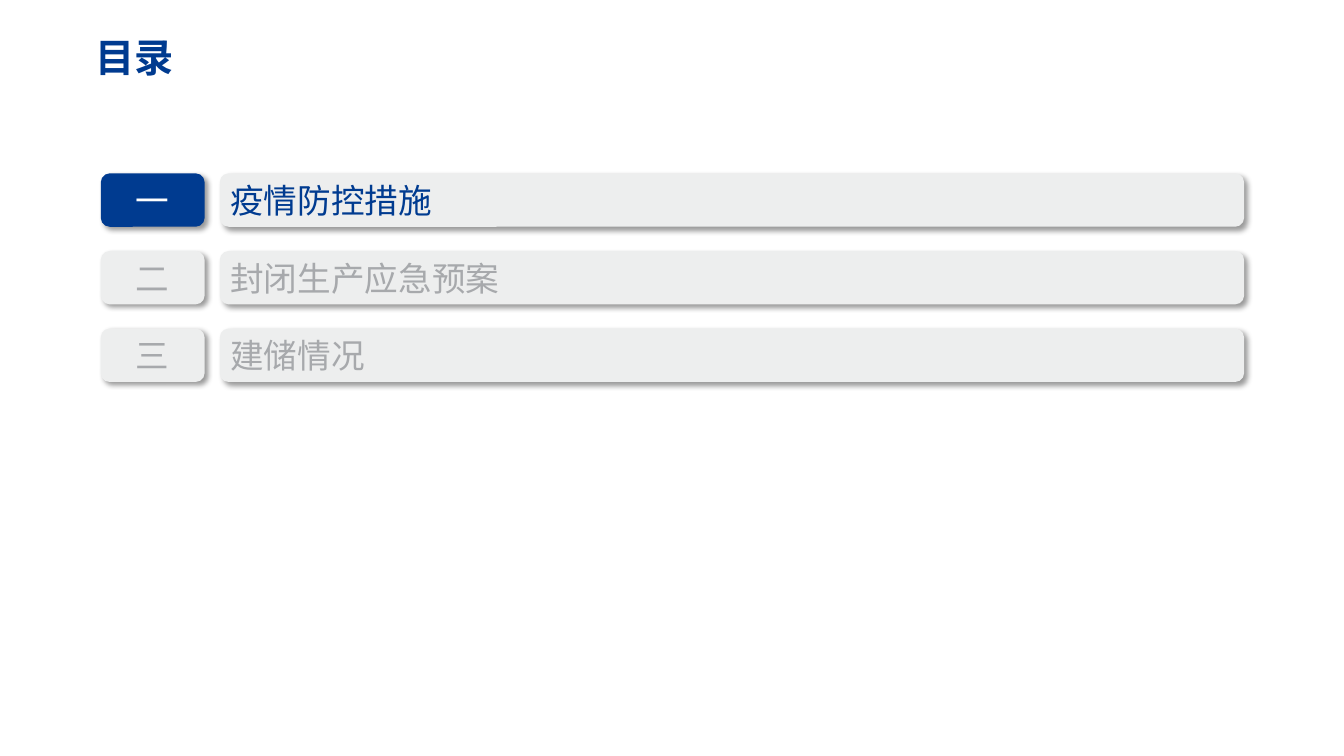
import lxml.etree
import pptx
import pptx.dml.color
import pptx.enum.shapes
import pptx.enum.text
import pptx.oxml.ns
import pptx.util

COLORS = {"navy": "003B90", "pale": "EDEEEE", "muted": "A7A9AC",
          "white": "FFFFFF", "shadow": "000000"}
FONT = "Noto Sans CJK SC"
SECTIONS = [("一", "疫情防控措施"), ("二", "封闭生产应急预案"), ("三", "建储情况")]
CURRENT = 0
ROW_PITCH, ROW_HEIGHT = 0.77, 0.53
NUMBER_WIDTH, COLUMN_GAP = 1.03, 0.15
LEFT = pptx.enum.text.PP_ALIGN.LEFT
CENTER = pptx.enum.text.PP_ALIGN.CENTER


def rgb(name):
    """Return the named palette colour."""
    return pptx.dml.color.RGBColor.from_string(COLORS[name])


def add_child(parent, tag, **attributes):
    """Append a DrawingML element to its parent."""
    child = lxml.etree.SubElement(parent, pptx.oxml.ns.qn(tag))
    for key, value in attributes.items():
        child.set(key, str(value))
    return child


def write_text(frame, text, size, color, align, bold=False):
    """Fill a text frame with one formatted paragraph."""
    frame.word_wrap = True
    frame.auto_size = pptx.enum.text.MSO_AUTO_SIZE.NONE
    frame.vertical_anchor = pptx.enum.text.MSO_ANCHOR.MIDDLE
    frame.margin_left = frame.margin_right = pptx.util.Inches(0.08)
    frame.margin_top = frame.margin_bottom = pptx.util.Inches(0.04)
    paragraph = frame.paragraphs[0]
    paragraph.text = text
    paragraph.alignment = align
    font = paragraph.font
    font.size = pptx.util.Pt(size)
    font.bold = bold
    font.color.rgb = rgb(color)
    font.name = FONT
    defaults = paragraph._p.pPr.find(pptx.oxml.ns.qn("a:defRPr"))
    add_child(defaults, "a:ea", typeface=FONT)


def add_shadow(shape):
    """Cast a soft shadow to the lower right."""
    shape.shadow.inherit = False
    effects = shape._element.spPr.find(pptx.oxml.ns.qn("a:effectLst"))
    shadow = add_child(effects, "a:outerShdw", blurRad=pptx.util.Pt(4),
                       dist=pptx.util.Pt(3), dir=45 * 60000,
                       algn="tl", rotWithShape=0)
    tint = add_child(shadow, "a:srgbClr", val=COLORS["shadow"])
    add_child(tint, "a:alpha", val=40000)


def add_panel(slide, box, text, fill, color, align):
    """Draw one rounded panel with its label."""
    panel = slide.shapes.add_shape(
        pptx.enum.shapes.MSO_SHAPE.ROUNDED_RECTANGLE,
        *map(pptx.util.Inches, box))
    panel.fill.solid()
    panel.fill.fore_color.rgb = rgb(fill)
    panel.line.fill.background()
    add_shadow(panel)
    write_text(panel.text_frame, text, 24, color, align)


def add_heading(slide, box, text):
    """Place the slide title in the given box."""
    title = slide.shapes.title
    title.left, title.top, title.width, title.height = map(pptx.util.Inches, box)
    write_text(title.text_frame, text, 28, "navy", LEFT, bold=True)
    title.text_frame.paragraphs[0].line_spacing = 0.9


def add_agenda(slide, left, top, width):
    """Stack the numbered sections, with the current one highlighted."""
    name_left = left + NUMBER_WIDTH + COLUMN_GAP
    name_width = left + width - name_left
    for row, (number, name) in enumerate(SECTIONS):
        y = top + row * ROW_PITCH
        current = row == CURRENT
        add_panel(slide, (name_left, y, name_width, ROW_HEIGHT), name,
                  "pale", "navy" if current else "muted", LEFT)
        add_panel(slide, (left, y, NUMBER_WIDTH, ROW_HEIGHT), number,
                  "navy" if current else "pale",
                  "white" if current else "muted", CENTER)


def main():
    """Build and save the contents slide."""
    deck = pptx.Presentation()
    deck.slide_width = pptx.util.Inches(13.33)
    deck.slide_height = pptx.util.Inches(7.5)
    slide = deck.slides.add_slide(deck.slide_layouts[5])
    add_heading(slide, (0.87, 0.29, 11.55, 0.61), "目录")
    add_agenda(slide, 1, 1.72, 11.34)
    deck.save("out.pptx")


if __name__ == "__main__":
    main()
